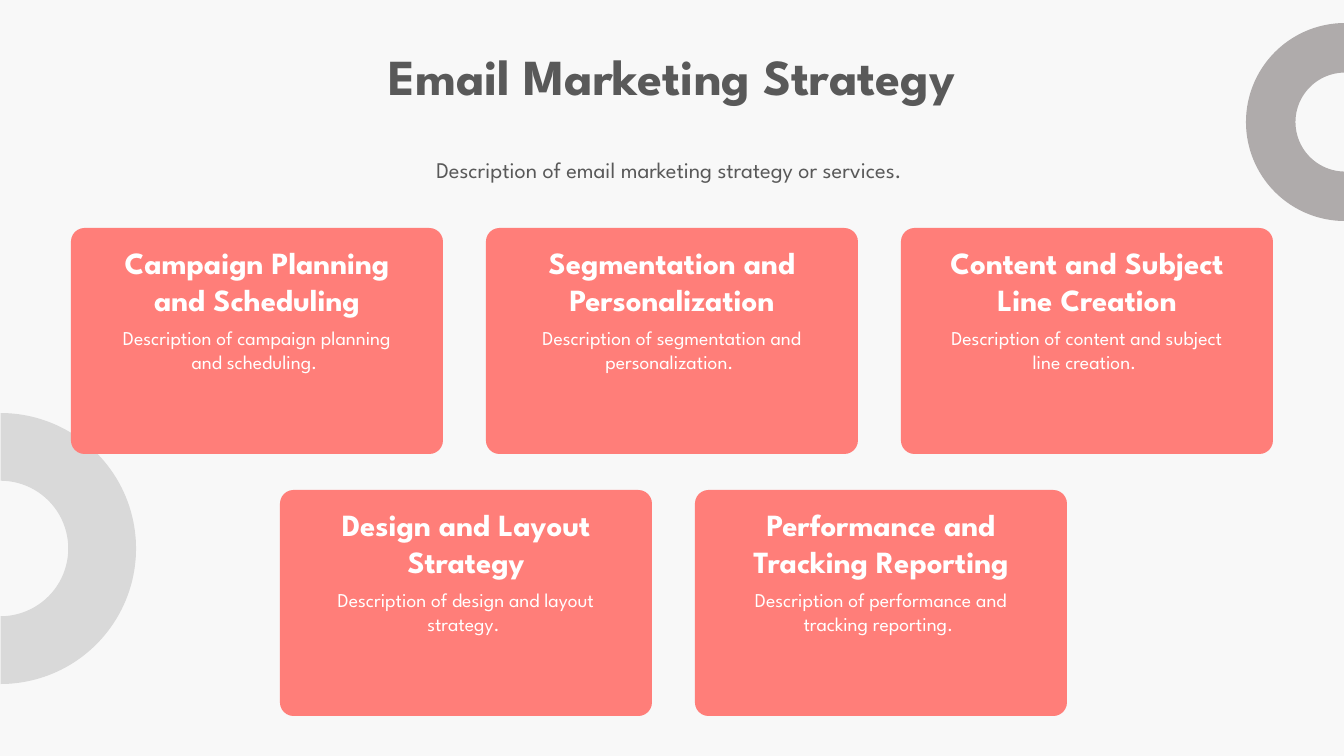
from pptx import Presentation
from pptx import util as u
from pptx.dml.color import RGBColor
from pptx.enum import shapes, text

PX = 12192000 / 1344
FONT = "League Spartan"
BACKGROUND = RGBColor(0xF8, 0xF8, 0xF8)
DARK_GREY = RGBColor(0x59, 0x59, 0x59)
LIGHT_RING = RGBColor(0xD9, 0xD9, 0xD9)
WARM_RING = RGBColor(0xAF, 0xAB, 0xAB)
CORAL = RGBColor(0xFF, 0x7E, 0x79)
WHITE = RGBColor(0xFF, 0xFF, 0xFF)

CARD_WIDTH, CARD_HEIGHT, CARD_STEP = 372, 226, 415
# Each row: left, top, cards as (heading, description)
CARD_ROWS = [
    (71, 228, [
        ("Campaign Planning and Scheduling",
         "Description of campaign planning and scheduling. "),
        ("Segmentation and Personalization",
         "Description of segmentation and personalization. "),
        ("Content and Subject Line Creation",
         "Description of content and subject line creation. "),
    ]),
    (280, 490, [
        ("Design and Layout Strategy",
         "Description of design and layout strategy. "),
        ("Performance and Tracking Reporting",
         "Description of performance and tracking reporting. "),
    ]),
]


def px(*lengths):
    return [u.Emu(round(length * PX)) for length in lengths]


def add_filled_shape(slide, kind, box, color):
    shape = slide.shapes.add_shape(kind, *px(*box))
    shape.shadow.inherit = False
    shape.fill.solid()
    shape.fill.fore_color.rgb = color
    shape.line.fill.background()
    return shape


def add_half_ring(slide, left, top, size, rotation, color):
    ring = add_filled_shape(slide, shapes.MSO_SHAPE.BLOCK_ARC,
                            (left, top, size, size), color)
    ring.rotation = rotation


def prepare_frame(frame):
    frame.word_wrap = True
    frame.auto_size = text.MSO_AUTO_SIZE.NONE
    frame.vertical_anchor = text.MSO_ANCHOR.TOP


def write_line(paragraph, words, size, color, bold=False, space_before=0):
    paragraph.alignment = text.PP_ALIGN.CENTER
    paragraph.space_before = u.Pt(space_before)
    run = paragraph.add_run()
    run.text = words
    run.font.name = FONT
    run.font.size = u.Pt(size)
    run.font.bold = bold
    run.font.color.rgb = color


def add_text_frame(slide, *box):
    frame = slide.shapes.add_textbox(*px(*box)).text_frame
    prepare_frame(frame)
    return frame


def add_title(slide, words):
    title = slide.shapes.title
    title.left, title.top, title.width, title.height = px(71, 40, 1202, 72)
    prepare_frame(title.text_frame)
    write_line(title.text_frame.paragraphs[0], words, 36, DARK_GREY, bold=True)


def add_card(slide, left, top, heading, description):
    card = add_filled_shape(slide, shapes.MSO_SHAPE.ROUNDED_RECTANGLE,
                            (left, top, CARD_WIDTH, CARD_HEIGHT), CORAL)
    card.adjustments[0] = 0.06
    frame = add_text_frame(slide, left + 26, top + 11, CARD_WIDTH - 52, 149)
    write_line(frame.paragraphs[0], heading, 22, WHITE, True, 6)
    write_line(frame.add_paragraph(), description, 14, WHITE, False, 6)


def main():
    presentation = Presentation()
    presentation.slide_width, presentation.slide_height = px(1344, 756)
    slide = presentation.slides.add_slide(presentation.slide_layouts[5])
    slide.background.fill.solid()
    slide.background.fill.fore_color.rgb = BACKGROUND

    add_half_ring(slide, -135, 413, 271, 90, LIGHT_RING)
    add_half_ring(slide, 1246, 23, 198, 270, WARM_RING)
    add_title(slide, "Email Marketing Strategy")
    subtitle = add_text_frame(slide, 71, 151, 1202, 37)
    write_line(subtitle.paragraphs[0],
               "Description of email marketing strategy or services. ",
               16, DARK_GREY)
    for left, top, cards in CARD_ROWS:
        for column, (heading, description) in enumerate(cards):
            add_card(slide, left + column * CARD_STEP, top,
                     heading, description)
    presentation.save("out.pptx")


if __name__ == "__main__":
    main()
